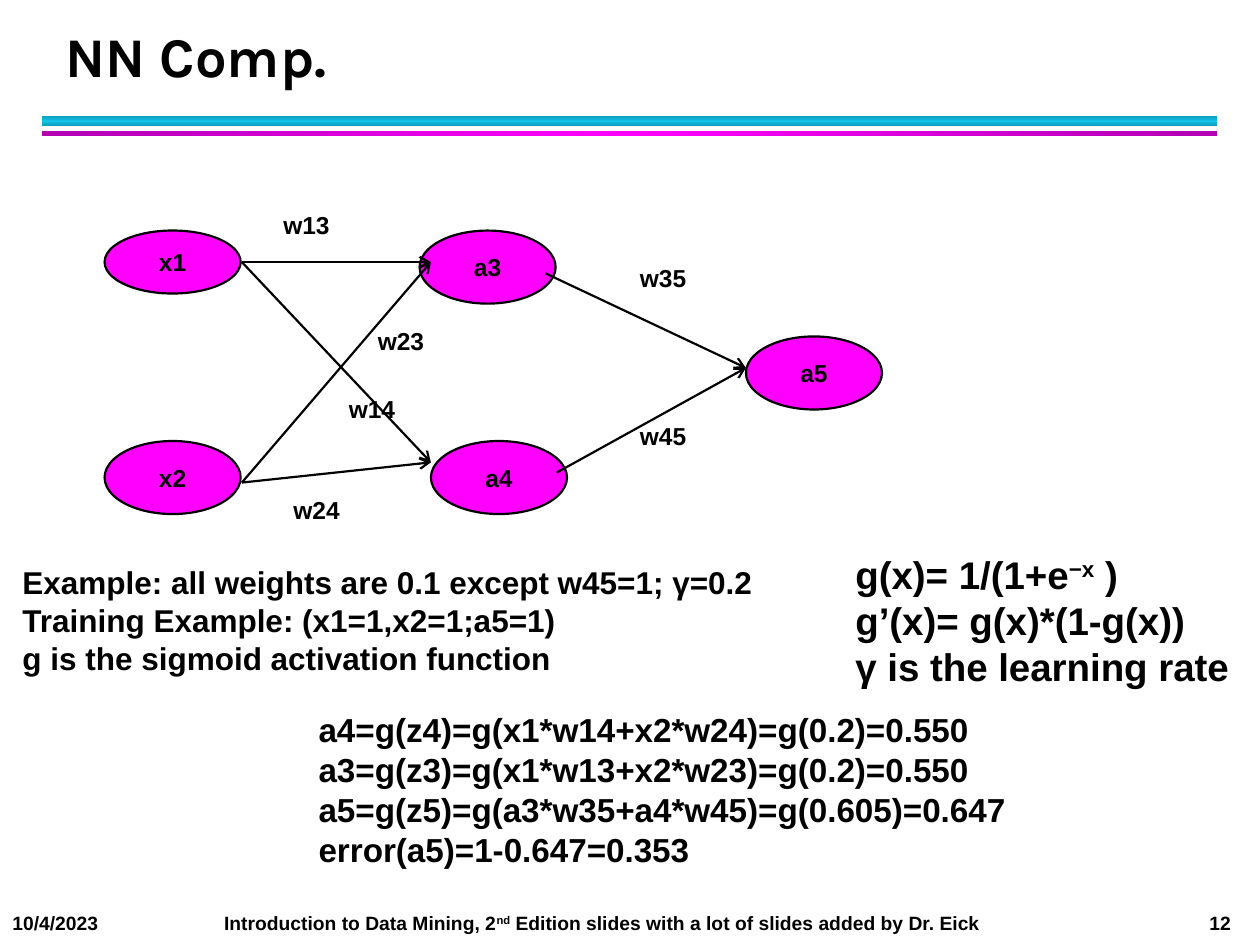
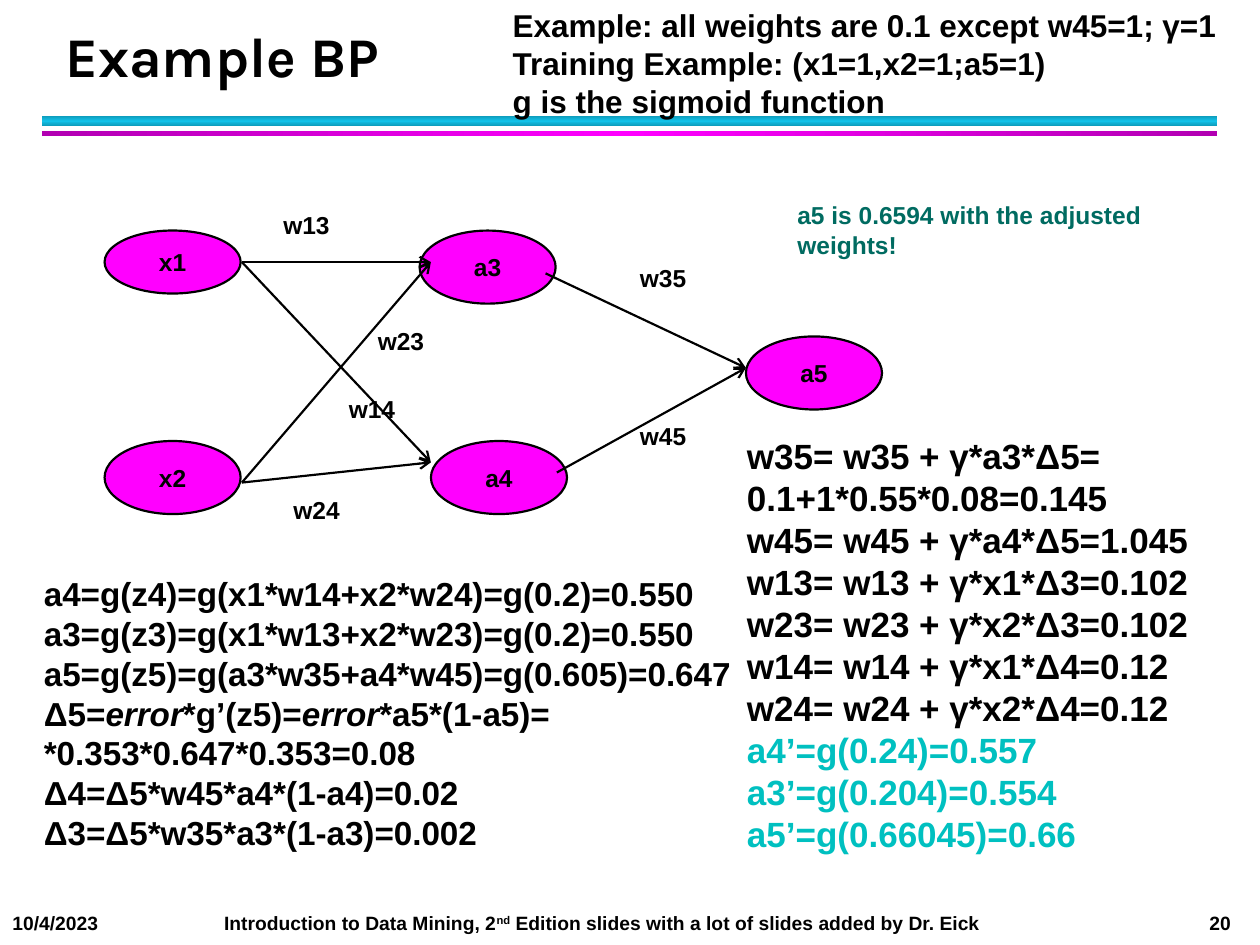
import copy

import pptx
import pptx.dml.color
import pptx.enum.shapes
import pptx.enum.text
import pptx.oxml
import pptx.oxml.ns
import pptx.util
from pptx.util import Inches

COLORS = {
    "ink": "000000",
    "node": "FF00FF",
    "cyan_edge": "0E9BBA",
    "cyan_mid": "12C2E9",
    "magenta_edge": "B200B2",
    "magenta_mid": "FF00FF",
    "updated": "00C0C0",
    "remark": "006B61",
}
BODY_FONT = "Arial"
TITLE_FONT = "Karla"
LINE_WIDTH = 1.25
NODE_WIDTH = 1.08
LABEL_SIZE = (0.63, 0.4)

# Network: name -> (left, top, height)
NODES = {
    "x1": (0.83, 1.83, 0.5),
    "x2": (0.83, 3.5, 0.58),
    "a3": (3.33, 1.83, 0.58),
    "a4": (3.42, 3.5, 0.58),
    "a5": (5.92, 2.67, 0.58),
}
# Weight -> (arrow start, arrow end, label position)
WEIGHTS = {
    "w13": ((1.92, 2.08), (3.42, 2.08), (2.15, 1.62)),
    "w14": ((1.92, 2.08), (3.42, 3.67), (2.67, 3.08)),
    "w23": ((1.92, 3.83), (3.42, 2.08), (2.9, 2.54)),
    "w24": ((1.92, 3.83), (3.42, 3.67), (2.23, 3.88)),
    "w35": ((4.33, 2.17), (5.92, 2.92), (4.98, 2.04)),
    "w45": ((4.42, 3.75), (5.92, 2.92), (4.98, 3.29)),
}
FORWARD_PASS = [
    "a4=g(z4)=g(x1*w14+x2*w24)=g(0.2)=0.550",
    "a3=g(z3)=g(x1*w13+x2*w23)=g(0.2)=0.550",
    "a5=g(z5)=g(a3*w35+a4*w45)=g(0.605)=0.647",
]


def rgb(name):
    return pptx.dml.color.RGBColor.from_string(COLORS[name])


def style_font(font, size, color="ink", name=BODY_FONT):
    font.name = name
    font.size = pptx.util.Pt(size)
    font.bold = True
    font.color.rgb = rgb(color)


def add_text(slide, at, lines, size, color="ink", font=BODY_FONT, wrap=True):
    """Each line is a string or a list of (text, style) pieces."""
    frame = slide.shapes.add_textbox(*map(Inches, at)).text_frame
    frame.word_wrap = wrap
    for index, line in enumerate(lines):
        paragraph = frame.paragraphs[0] if index == 0 else frame.add_paragraph()
        style_font(paragraph.font, size, color, font)
        for text, style in [(line, None)] if isinstance(line, str) else line:
            run = paragraph.add_run()
            run.text = text
            if style == "italic":
                run.font.italic = True
            elif style == "super":
                run._r.get_or_add_rPr().set("baseline", "30000")
    return frame


def add_band(slide, top, height, edge, middle, angle):
    band = slide.shapes.add_shape(
        pptx.enum.shapes.MSO_SHAPE.RECTANGLE,
        Inches(0.33), Inches(top), Inches(9.33), Inches(height))
    band.shadow.inherit = False
    band.line.fill.background()
    band.fill.gradient()
    band.fill.gradient_angle = angle
    stop_list = band._element.spPr.find(".//" + pptx.oxml.ns.qn("a:gsLst"))
    stop_list.append(copy.deepcopy(stop_list[-1]))
    stops = zip(band.fill.gradient_stops, (0, 0.5, 1), (edge, middle, edge))
    for stop, position, color in stops:
        stop.position = position
        stop.color.rgb = rgb(color)


def add_footer(slide, number):
    frame = add_text(slide, (0, 7.18, 9.92, 0.3), [[
        ("10/4/2023\tIntroduction to Data Mining, 2", None),
        ("nd", "super"),
        (f" Edition slides with a lot of slides added by Dr. Eick\t{number}", None),
    ]], 11)
    # Tab stops for the course title and the right-aligned page number
    tabs = pptx.oxml.parse_xml(
        f'<a:tabLst {pptx.oxml.ns.nsdecls("a")}>'
        f'<a:tab pos="{Inches(1.68)}" algn="l"/>'
        f'<a:tab pos="{Inches(9.67)}" algn="r"/></a:tabLst>')
    frame.paragraphs[0]._p.get_or_add_pPr().insert(0, tabs)


def add_base_slide(deck, title, number):
    slide = deck.slides.add_slide(deck.slide_layouts[6])
    add_band(slide, 0.92, 0.08, "cyan_edge", "cyan_mid", 90)
    add_band(slide, 1.04, 0.04, "magenta_edge", "magenta_mid", 0)
    add_footer(slide, number)
    heading = add_text(slide, (0.42, 0.17, 9.06, 0.58), [title], 32, font=TITLE_FONT)
    heading.vertical_anchor = pptx.enum.text.MSO_ANCHOR.BOTTOM
    heading.paragraphs[0].line_spacing = pptx.util.Pt(36)
    return slide


def add_node(slide, name, left, top, height):
    node = slide.shapes.add_shape(
        pptx.enum.shapes.MSO_SHAPE.OVAL,
        Inches(left), Inches(top), Inches(NODE_WIDTH), Inches(height))
    node.shadow.inherit = False
    node.fill.solid()
    node.fill.fore_color.rgb = rgb("node")
    node.line.color.rgb = rgb("ink")
    node.line.width = pptx.util.Pt(LINE_WIDTH)
    frame = node.text_frame
    frame.word_wrap = False
    frame.vertical_anchor = pptx.enum.text.MSO_ANCHOR.MIDDLE
    caption = frame.paragraphs[0]
    caption.text = name
    caption.alignment = pptx.enum.text.PP_ALIGN.CENTER
    style_font(caption.font, 14)


def add_arrow(slide, start, end):
    arrow = slide.shapes.add_connector(
        pptx.enum.shapes.MSO_CONNECTOR.STRAIGHT, *map(Inches, start + end))
    arrow.line.color.rgb = rgb("ink")
    arrow.line.width = pptx.util.Pt(LINE_WIDTH)
    properties = arrow._element.spPr
    for parent, tag in ((arrow.line._get_or_add_ln(), "tailEnd"),
                        (properties, "effectLst")):
        parent.append(pptx.oxml.parse_xml(
            f'<a:{tag} {pptx.oxml.ns.nsdecls("a")}/>'))
    arrow.line._get_or_add_ln()[-1].set("type", "arrow")


def add_network(slide):
    for name, place in NODES.items():
        add_node(slide, name, *place)
    for start, end, _ in WEIGHTS.values():
        add_arrow(slide, start, end)
    for weight, (_, _, corner) in WEIGHTS.items():
        add_text(slide, corner + LABEL_SIZE, [weight], 14, wrap=False)


def build_computation(deck):
    slide = add_base_slide(deck, "NN Comp.", 12)
    add_network(slide)
    add_text(slide, (2.43, 5.58, 5.74, 1.38),
             FORWARD_PASS + ["error(a5)=1-0.647=0.353"], 19, wrap=False)
    add_text(slide, (0.08, 4.42, 6.08, 1.01), [
        "Example: all weights are 0.1 except w45=1; γ=0.2",
        "Training Example: (x1=1,x2=1;a5=1)",
        "g is the sigmoid activation function",
    ], 18)
    add_text(slide, (6.69, 4.32, 3.18, 1.21), [
        [("g(x)= 1/(1+e", None), ("−x", "super"), (" )", None)],
        "g’(x)= g(x)*(1-g(x))",
        "γ is the learning rate",
    ], 22)


def build_backpropagation(deck):
    slide = add_base_slide(deck, "Example BP", 20)
    add_network(slide)
    # Forward pass and error terms
    add_text(slide, (0.25, 4.5, 5.74, 2.66), FORWARD_PASS + [
        [("Δ5=", None), ("error", "italic"), ("*g’(z5)=", None),
         ("error", "italic"), ("*a5*(1-a5)=", None)],
        "*0.353*0.647*0.353=0.08",
        "Δ4=Δ5*w45*a4*(1-a4)=0.02",
        "Δ3=Δ5*w35*a3*(1-a3)=0.002",
    ], 19, wrap=False)
    # Weight updates, then the new activations
    updates = add_text(slide, (5.83, 3.4, 4.17, 3.8), [
        "w35= w35 + γ*a3*Δ5=",
        "0.1+1*0.55*0.08=0.145",
        "w45= w45 + γ*a4*Δ5=1.045",
        "w13= w13 + γ*x1*Δ3=0.102",
        "w23= w23 + γ*x2*Δ3=0.102",
        "w14= w14 + γ*x1*Δ4=0.12",
        "w24= w24 + γ*x2*Δ4=0.12",
        "a4’=g(0.24)=0.557",
        "a3’=g(0.204)=0.554",
        "a5’=g(0.66045)=0.66",
    ], 20)
    for activation in updates.paragraphs[-3:]:
        activation.font.color.rgb = rgb("updated")
    add_text(slide, (3.97, 0, 6.08, 1.01), [
        "Example: all weights are 0.1 except w45=1; γ=1 "
        "Training Example: (x1=1,x2=1;a5=1)",
        "g is the sigmoid function",
    ], 18)
    add_text(slide, (6.23, 1.54, 3.4, 0.7),
             ["a5 is 0.6594 with the adjusted", "weights!"], 14, "remark")


def main():
    deck = pptx.Presentation()
    deck.slide_width = Inches(10)
    deck.slide_height = Inches(7.5)
    build_computation(deck)
    build_backpropagation(deck)
    deck.save("out.pptx")


if __name__ == "__main__":
    main()
